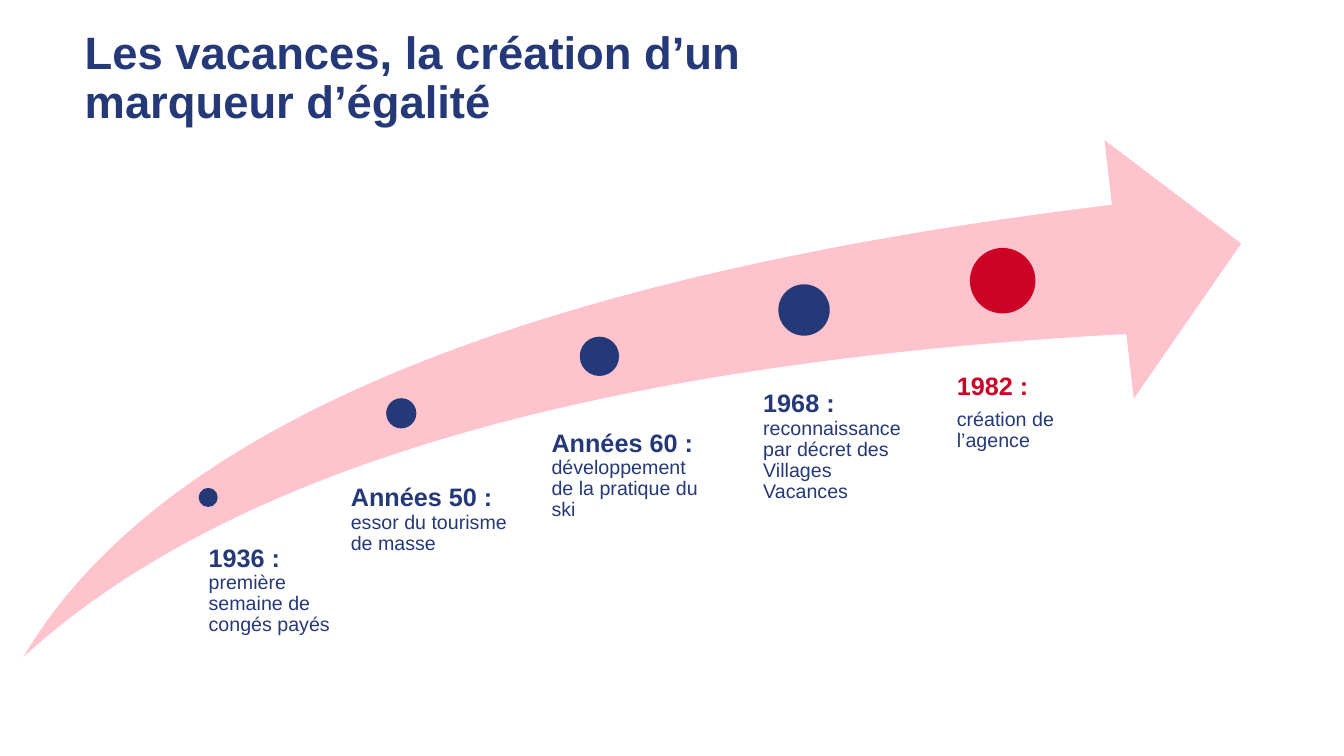
import dataclasses

import pptx
import pptx.dml.color
import pptx.enum.shapes
import pptx.enum.text
import pptx.util


@dataclasses.dataclass(frozen=True)
class Theme:
    font: str = "Arial"
    navy: str = "253979"
    red: str = "CC0226"
    pink: str = "FEC3CD"
    title_size: float = 32.4
    date_size: float = 18
    body_size: float = 14
    line_spacing: float = 0.9
    paragraph_gap: float = 6


@dataclasses.dataclass(frozen=True)
class Area:
    """A rectangle in inches that turns percentages into lengths."""
    left: float
    top: float
    width: float
    height: float

    def across(self, percent):
        return pptx.util.Inches(self.width * percent / 100)

    def down(self, percent):
        return pptx.util.Inches(self.height * percent / 100)

    def x(self, percent):
        return pptx.util.Inches(self.left) + self.across(percent)

    def y(self, percent):
        return pptx.util.Inches(self.top) + self.down(percent)


@dataclasses.dataclass(frozen=True)
class Milestone:
    """Dot centre and diameter, then label left, top and width, in percent of the arrow."""
    date: str
    event: str
    dot: tuple
    label: tuple
    highlighted: bool = False


THEME = Theme()
SLIDE = Area(0, 0, 13.33, 7.5)
ARROW = Area(0.23, 1.39, 12.08, 5.13)
LABEL_HEIGHT = 20

MILESTONES = [
    Milestone("1936 : ", "première semaine de congés payés",
              (15.19, 69.1, 1.57), (15.23, 78.36, 10.35)),
    Milestone("Années 50 : ", "essor du tourisme de masse",
              (31.04, 52.83, 2.48), (26.9, 66.67, 13.41)),
    Milestone("Années 60 : ", "développement de la pratique du ski",
              (47.31, 41.81, 3.23), (43.38, 56.14, 12.5)),
    Milestone("1968 : ", "reconnaissance par décret des Villages Vacances",
              (64.11, 32.85, 4.22), (60.76, 48.54, 12.83)),
    Milestone("1982 :", "création de l’agence",
              (80.42, 27.19, 5.38), (76.66, 45.22, 10.76), True),
]


def format_run(run, size, color, bold=False):
    run.font.name = THEME.font
    run.font.size = pptx.util.Pt(size)
    run.font.bold = bold
    run.font.color.rgb = pptx.dml.color.RGBColor.from_string(color)


def add_title(slide, text):
    title = slide.shapes.title
    title.left, title.top = SLIDE.x(5.55), SLIDE.y(5.33)
    title.width, title.height = SLIDE.across(86.27), SLIDE.down(10.4)
    text_frame = title.text_frame
    text_frame.text = text
    text_frame.word_wrap = True
    text_frame.auto_size = pptx.enum.text.MSO_AUTO_SIZE.NONE
    text_frame.vertical_anchor = pptx.enum.text.MSO_ANCHOR.MIDDLE
    paragraph = text_frame.paragraphs[0]
    paragraph.alignment = pptx.enum.text.PP_ALIGN.LEFT
    paragraph.line_spacing = THEME.line_spacing
    for run in paragraph.runs:
        format_run(run, THEME.title_size, THEME.navy, bold=True)


def add_filled_shape(slide, kind, left, top, width, height, color):
    shape = slide.shapes.add_shape(kind, left, top, width, height)
    shape.shadow.inherit = False
    shape.fill.solid()
    shape.fill.fore_color.rgb = pptx.dml.color.RGBColor.from_string(color)
    shape.line.fill.background()
    return shape


def add_arrow(slide):
    arrow = add_filled_shape(
        slide, pptx.enum.shapes.MSO_SHAPE.SWOOSH_ARROW,
        ARROW.x(0), ARROW.y(0), ARROW.across(100), ARROW.down(100), THEME.pink)
    arrow.adjustments[0] = 0.25
    arrow.adjustments[1] = 0.25


def add_dot(slide, milestone, color):
    center_x, center_y, size = milestone.dot
    diameter = ARROW.across(size)
    add_filled_shape(
        slide, pptx.enum.shapes.MSO_SHAPE.OVAL,
        ARROW.x(center_x) - diameter // 2, ARROW.y(center_y) - diameter // 2,
        diameter, diameter, color)


def add_label(slide, milestone, color):
    """Date and event share a paragraph, except that a highlighted date stands alone."""
    left, top, width = milestone.label
    box = slide.shapes.add_textbox(
        ARROW.x(left), ARROW.y(top), ARROW.across(width), ARROW.down(LABEL_HEIGHT))
    text_frame = box.text_frame
    text_frame.word_wrap = True
    text_frame.margin_left = text_frame.margin_right = 0
    text_frame.margin_top = text_frame.margin_bottom = 0
    paragraph = text_frame.paragraphs[0]
    paragraph.text = milestone.date
    format_run(paragraph.runs[0], THEME.date_size, color, bold=True)
    if milestone.highlighted:
        paragraph = text_frame.add_paragraph()
    event = paragraph.add_run()
    event.text = milestone.event
    format_run(event, THEME.body_size, THEME.navy)
    for paragraph in text_frame.paragraphs:
        paragraph.line_spacing = THEME.line_spacing
        paragraph.space_after = pptx.util.Pt(THEME.paragraph_gap)


def main():
    presentation = pptx.Presentation()
    presentation.slide_width = SLIDE.across(100)
    presentation.slide_height = SLIDE.down(100)
    title_only = presentation.slide_layouts.get_by_name("Title Only")
    slide = presentation.slides.add_slide(title_only)
    add_title(slide, "Les vacances, la création d’un \vmarqueur d’égalité")
    add_arrow(slide)
    for milestone in MILESTONES:
        color = THEME.red if milestone.highlighted else THEME.navy
        add_dot(slide, milestone, color)
        add_label(slide, milestone, color)
    presentation.save("out.pptx")


if __name__ == "__main__":
    main()
